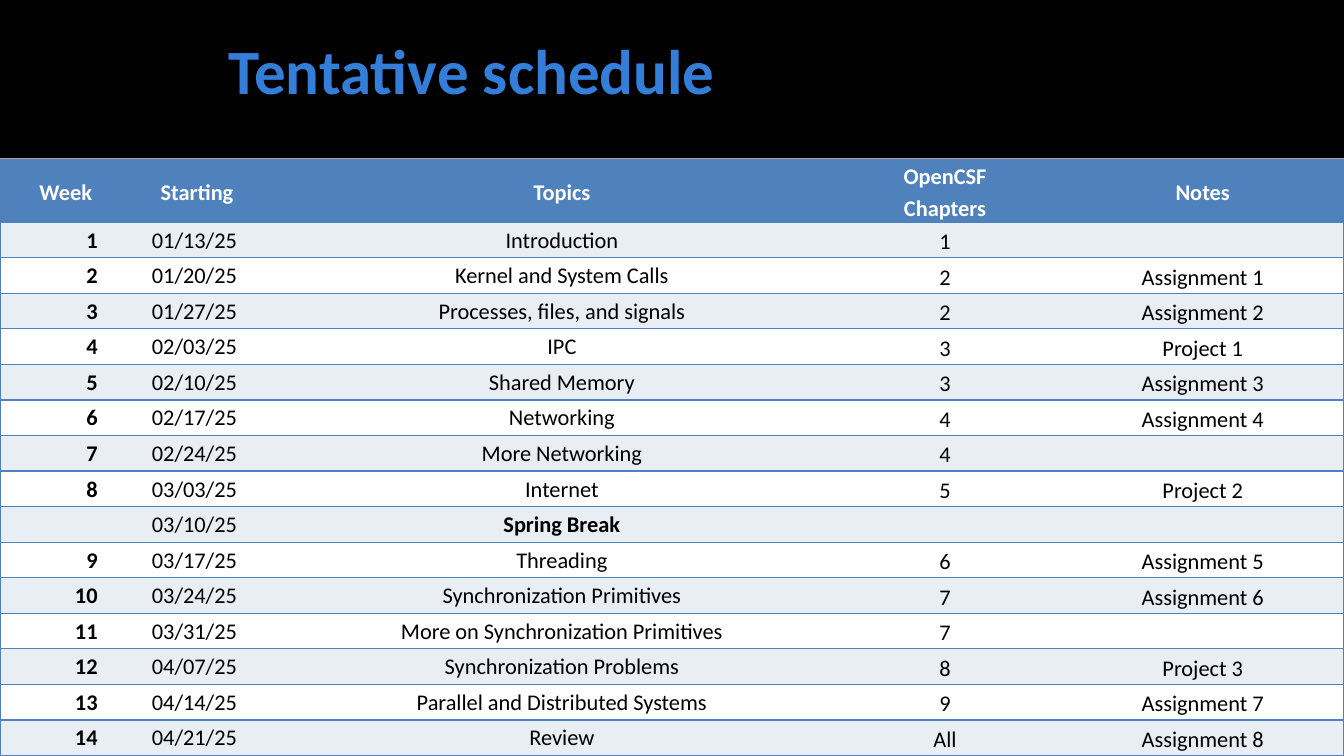
import pptx
import pptx.dml.color
import pptx.enum.shapes
import pptx.enum.text
import pptx.oxml
import pptx.oxml.ns
import pptx.util

Cm = pptx.util.Cm
Pt = pptx.util.Pt
RGB = pptx.dml.color.RGBColor
ALIGN = pptx.enum.text.PP_ALIGN
MIDDLE = pptx.enum.text.MSO_ANCHOR.MIDDLE

WHITE = RGB(0xFF, 0xFF, 0xFF)
BLACK = RGB(0x00, 0x00, 0x00)
AZURE = RGB(0x33, 0x7E, 0xD9)
BLUE = RGB(0x4F, 0x81, 0xBD)
PALE = RGB(0xE9, 0xED, 0xF4)
FONT = "Calibri"
PLAIN = "{2D5ABB26-0587-4C30-8999-92F81FD0307C}"

WIDE = 33.87
HIGH = 19.05
HEAD = 1.55
COLS = [2.49, 4.95, 13.44, 5.87, 7.12]
ROWS = [
    ("Week", "Starting", "Topics", "OpenCSF\nChapters", "Notes"),
    ("1", "01/13/25 ", "Introduction", "1", ""),
    ("2", "01/20/25 ", "Kernel and System Calls", "2", "Assignment 1"),
    ("3", "01/27/25 ", "Processes, files, and signals", "2", "Assignment 2"),
    ("4", "02/03/25 ", "IPC", "3", "Project 1"),
    ("5", "02/10/25 ", "Shared Memory", "3", "Assignment 3"),
    ("6", "02/17/25 ", "Networking", "4", "Assignment 4"),
    ("7", "02/24/25 ", "More Networking", "4", ""),
    ("8", "03/03/25 ", "Internet", "5", "Project 2"),
    ("", "03/10/25 ", "Spring Break", "", ""),
    ("9", "03/17/25 ", "Threading", "6", "Assignment 5"),
    ("10", "03/24/25 ", "Synchronization Primitives", "7", "Assignment 6"),
    ("11", "03/31/25 ", "More on Synchronization Primitives", "7", ""),
    ("12", "04/07/25 ", "Synchronization Problems", "8", "Project 3"),
    ("13", "04/14/25 ", "Parallel and Distributed Systems", "9", "Assignment 7"),
    ("14", "04/21/25 ", "Review", "All", "Assignment 8"),
]


def add_run(para, text, size, color, bold):
    run = para.add_run()
    run.text = text
    font = run.font
    font.name = FONT
    font.size = Pt(size)
    font.bold = bold
    font.color.rgb = color


def add_bar(slide, left, top, width, height, color):
    bar = slide.shapes.add_shape(
        pptx.enum.shapes.MSO_SHAPE.RECTANGLE, Cm(left), Cm(top), Cm(width), Cm(height))
    bar.shadow.inherit = False
    bar.fill.solid()
    bar.fill.fore_color.rgb = color
    bar.line.fill.background()


def add_title(slide, left, top, width, height):
    add_bar(slide, left, top + height, width, 0.13, WHITE)
    add_bar(slide, left, top, width, height, BLACK)
    title = slide.shapes.title
    slide.shapes._spTree.append(title._element)
    title.left, title.top = Cm(left + 5.51), Cm(top)
    title.width, title.height = Cm(22.86), Cm(height - 0.51)
    frame = title.text_frame
    frame.word_wrap = True
    frame.vertical_anchor = MIDDLE
    frame.margin_left = Cm(0.25)
    frame.margin_top = frame.margin_right = frame.margin_bottom = Cm(0.13)
    para = frame.paragraphs[0]
    para.alignment = ALIGN.LEFT
    add_run(para, "Tentative schedule", 45, AZURE, True)


def add_edge(cell, sides):
    props = cell._tc.get_or_add_tcPr()
    space = pptx.oxml.ns.nsdecls("a")
    for spot, side in enumerate(sides):
        props.insert(spot, pptx.oxml.parse_xml(
            f'<a:ln{side} {space} w="12700"><a:solidFill>'
            f'<a:srgbClr val="{BLUE}"/></a:solidFill></a:ln{side}>'))


def fill_cell(cell, text, row, col):
    head = row == 0
    roomy = head or col > 2
    cell.vertical_anchor = MIDDLE
    cell.margin_left = cell.margin_right = Cm(0.17 if roomy else 0.03)
    cell.margin_top = Cm(0 if roomy or not text else 0.03)
    cell.margin_bottom = 0
    cell.fill.solid()
    cell.fill.fore_color.rgb = BLUE if head else PALE if row % 2 else WHITE
    sides = "LTB" if col == 0 else "RTB" if col == len(COLS) - 1 else "TB"
    add_edge(cell, sides)
    bold = head or col == 0 or text == "Spring Break"
    frame = cell.text_frame
    for count, line in enumerate(text.split("\n") if text else []):
        para = frame.add_paragraph() if count else frame.paragraphs[0]
        para.alignment = ALIGN.RIGHT if col == 0 else ALIGN.CENTER
        if roomy:
            para.line_spacing = 1.15
        add_run(para, line, 16, WHITE if head else BLACK, bold)


def add_plan(slide, left, top, width, height):
    frame = slide.shapes.add_table(
        len(ROWS), len(COLS), Cm(left), Cm(top), Cm(width), Cm(height))
    table = frame.table
    table._tbl.tblPr.find(pptx.oxml.ns.qn("a:tableStyleId")).text = PLAIN
    for col, size in enumerate(COLS):
        table.columns[col].width = Cm(size)
    step = (height - HEAD) / (len(ROWS) - 1)
    for row, words in enumerate(ROWS):
        table.rows[row].height = Cm(step if row else HEAD)
        for col, text in enumerate(words):
            fill_cell(table.cell(row, col), text, row, col)


def main():
    deck = pptx.Presentation()
    deck.slide_width, deck.slide_height = Cm(WIDE), Cm(HIGH)
    slide = deck.slides.add_slide(deck.slide_layouts[5])
    add_title(slide, 0, 0, WIDE, 3.99)
    add_plan(slide, 0, 4.01, WIDE, 14.99)
    deck.save("out.pptx")


if __name__ == "__main__":
    main()
